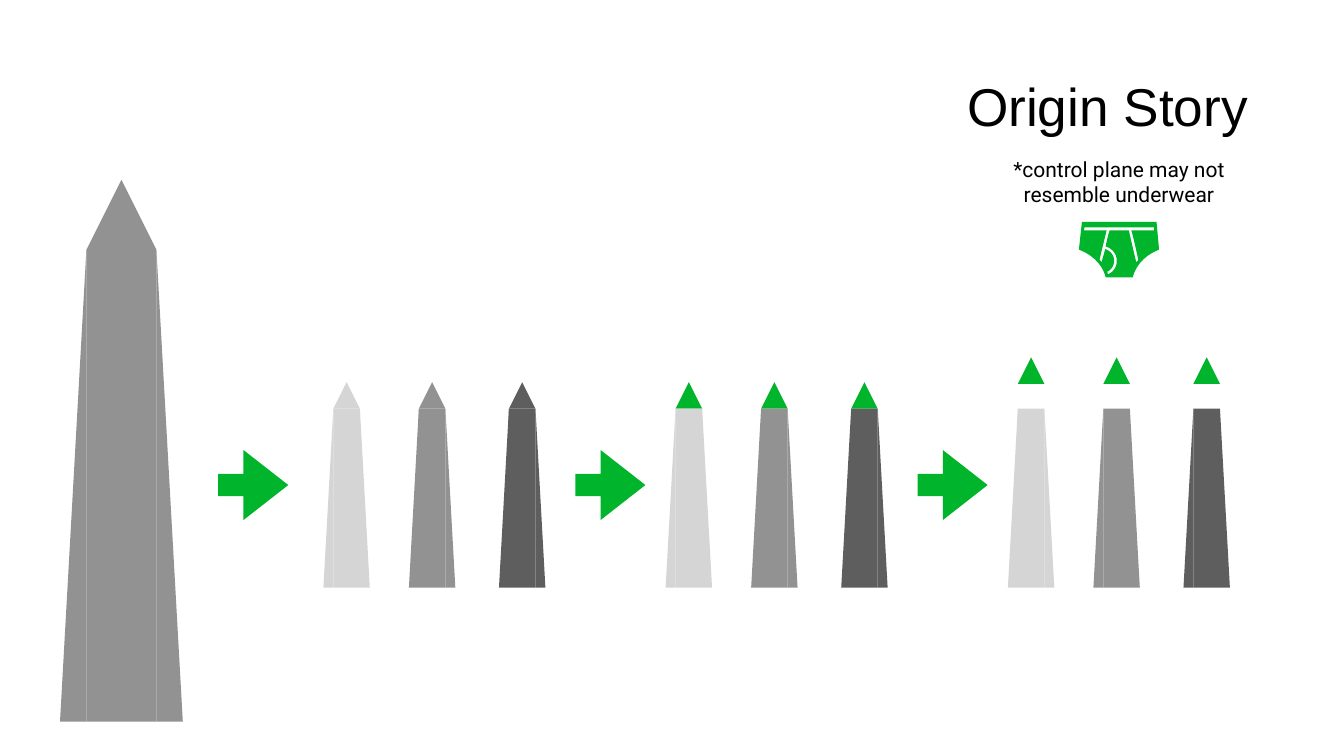
import pptx
import pptx.dml.color
import pptx.enum.shapes
import pptx.enum.text
import pptx.util

Cm = pptx.util.Cm

THEME = {
    "accent": "00B42B", "light": "D5D5D5", "middle": "929292", "dark": "5E5E5E",
    "text": "000000", "background": "FFFFFF",
    "title_font": "Arial", "title_size": 76,
    "caption_font": "Roboto", "caption_size": 30,
}

TITLE = "Origin Story"
CAPTION = "*control plane may not resemble underwear"

MONOLITH = {"width": 3.53, "flare": 1.33, "top": 12.59, "height": 23.78}
SERVICE = {"width": 1.34, "flare": 0.5, "top": 20.6, "height": 9.02}
MONOLITH_CENTER = 6.12

SERVICES = [(0, "light"), (4.31, "middle"), (8.85, "dark")]
FIRST_SERVICE, STAGE_STEP = 17.47, 17.25
STAGES = [
    {"arrow": 11, "cap": None, "lift": 0},
    {"arrow": 29, "cap": "accent", "lift": 0},
    {"arrow": 46.25, "cap": "accent", "lift": 1.25},
]
ARROW_TOP, ARROW_SIZE = 22.68, 3.53

BRIEFS_LEFT, BRIEFS_TOP, BRIEFS_WIDTH = 54.38, 11.18, 4.04
BRIEFS_UNITS, CURVE_STEPS = 159, 10
BRIEFS_OUTLINE = [
    (6, 0), (0, 55), (47, 73, 53, 110, 53, 110), (107, 110),
    (107, 110, 113, 73, 159, 55), (154, 0),
]
BRIEFS_SEAMS = [
    (11, 11), (149, 11), (149, 17), (104, 17),
    (107, 26, 113, 53, 118, 76), (116, 77, 115, 79, 114, 81),
    (108, 57, 101, 25, 99, 17), (61, 17), (59, 22, 56, 34, 53, 49),
    (65, 52, 75, 63, 75, 76), (76, 88, 69, 99, 58, 104),
    (57, 103, 57, 101, 56, 99), (65, 95, 70, 86, 70, 76),
    (69, 65, 62, 57, 52, 54), (50, 63, 47, 72, 45, 80),
    (44, 79, 43, 77, 41, 75), (46, 53, 53, 26, 55, 17), (10, 17),
]


def color(name):
    return pptx.dml.color.RGBColor.from_string(THEME[name])


def paint(shape, fill):
    shape.shadow.inherit = False
    shape.fill.solid()
    shape.fill.fore_color.rgb = color(fill)
    shape.line.fill.background()


def add_outline(shapes, contours, fill):
    contours = [[(Cm(x), Cm(y)) for x, y in contour] for contour in contours]
    builder = shapes.build_freeform(*contours[0][0])
    for contour in contours:
        if contour is not contours[0]:
            builder.move_to(*contour[0])
        builder.add_line_segments(contour[1:], close=True)
    paint(builder.convert_to_shape(), fill)


def add_obelisk(shapes, center, size, fill, cap=None, lift=0):
    width, top, height = size["width"], size["top"], size["height"]
    left, right, bottom = center - width / 2, center + width / 2, top + height
    base = top - lift
    add_outline(shapes, [[(center, base - width), (right, base), (left, base)]], cap or fill)
    for edge, foot in ((right, right + size["flare"]), (left, left - size["flare"])):
        add_outline(shapes, [[(edge, top), (edge, bottom), (foot, bottom)]], fill)
    shaft = shapes.add_shape(pptx.enum.shapes.MSO_SHAPE.RECTANGLE,
                             Cm(left), Cm(top), Cm(width), Cm(height))
    paint(shaft, fill)


def add_stage(shapes, index, stage):
    group = shapes.add_group_shape().shapes
    for offset, shade in SERVICES:
        center = FIRST_SERVICE + index * STAGE_STEP + offset
        add_obelisk(group, center, SERVICE, shade, stage["cap"], stage["lift"])
    arrow = group.add_shape(pptx.enum.shapes.MSO_SHAPE.RIGHT_ARROW, Cm(stage["arrow"]),
                            Cm(ARROW_TOP), Cm(ARROW_SIZE), Cm(ARROW_SIZE))
    arrow.adjustments[0], arrow.adjustments[1] = 0.32, 0.64
    paint(arrow, "accent")


def flatten(contour):
    points = []
    for segment in contour:
        if len(segment) == 2:
            points.append(segment)
            continue
        start, curve = points[-1], (segment[:2], segment[2:4], segment[4:])
        for step in range(1, CURVE_STEPS + 1):
            t = step / CURVE_STEPS
            weights = ((1 - t) ** 3, 3 * t * (1 - t) ** 2, 3 * t * t * (1 - t), t ** 3)
            points.append(tuple(sum(w * p[axis] for w, p in zip(weights, (start, *curve)))
                                for axis in (0, 1)))
    unit = BRIEFS_WIDTH / BRIEFS_UNITS
    return [(BRIEFS_LEFT + x * unit, BRIEFS_TOP + y * unit) for x, y in points]


def set_text(box, text, role, align, anchor):
    frame = box.text_frame
    frame.text = text
    frame.word_wrap = True
    frame.auto_size = pptx.enum.text.MSO_AUTO_SIZE.NONE
    frame.vertical_anchor = anchor
    frame.margin_left = frame.margin_right = Cm(0.15)
    frame.margin_top = frame.margin_bottom = Cm(0.15)
    paragraph = frame.paragraphs[0]
    paragraph.alignment = align
    paragraph.font.name = THEME[role + "_font"]
    paragraph.font.size = pptx.util.Pt(THEME[role + "_size"])
    paragraph.font.color.rgb = color("text")


def main():
    deck = pptx.Presentation()
    deck.slide_width, deck.slide_height = Cm(67.74), Cm(38.1)
    slide = deck.slides.add_slide(deck.slide_layouts[5])
    slide.background.fill.solid()
    slide.background.fill.fore_color.rgb = color("background")
    shapes = slide.shapes

    title = shapes.title
    title.left, title.top, title.width, title.height = Cm(4.7), Cm(0.71), Cm(58.34), Cm(6.35)
    set_text(title, TITLE, "title", pptx.enum.text.PP_ALIGN.RIGHT,
             pptx.enum.text.MSO_ANCHOR.BOTTOM)

    add_obelisk(shapes, MONOLITH_CENTER, MONOLITH, "middle")
    for index, stage in enumerate(STAGES):
        add_stage(shapes, index, stage)

    footnote = shapes.add_group_shape().shapes
    add_outline(footnote, [flatten(BRIEFS_OUTLINE), flatten(BRIEFS_SEAMS)], "accent")
    caption = footnote.add_textbox(Cm(49.25), Cm(7.75), Cm(14.3), Cm(2.79))
    set_text(caption, CAPTION, "caption", pptx.enum.text.PP_ALIGN.CENTER,
             pptx.enum.text.MSO_ANCHOR.MIDDLE)

    deck.save("out.pptx")


if __name__ == "__main__":
    main()
